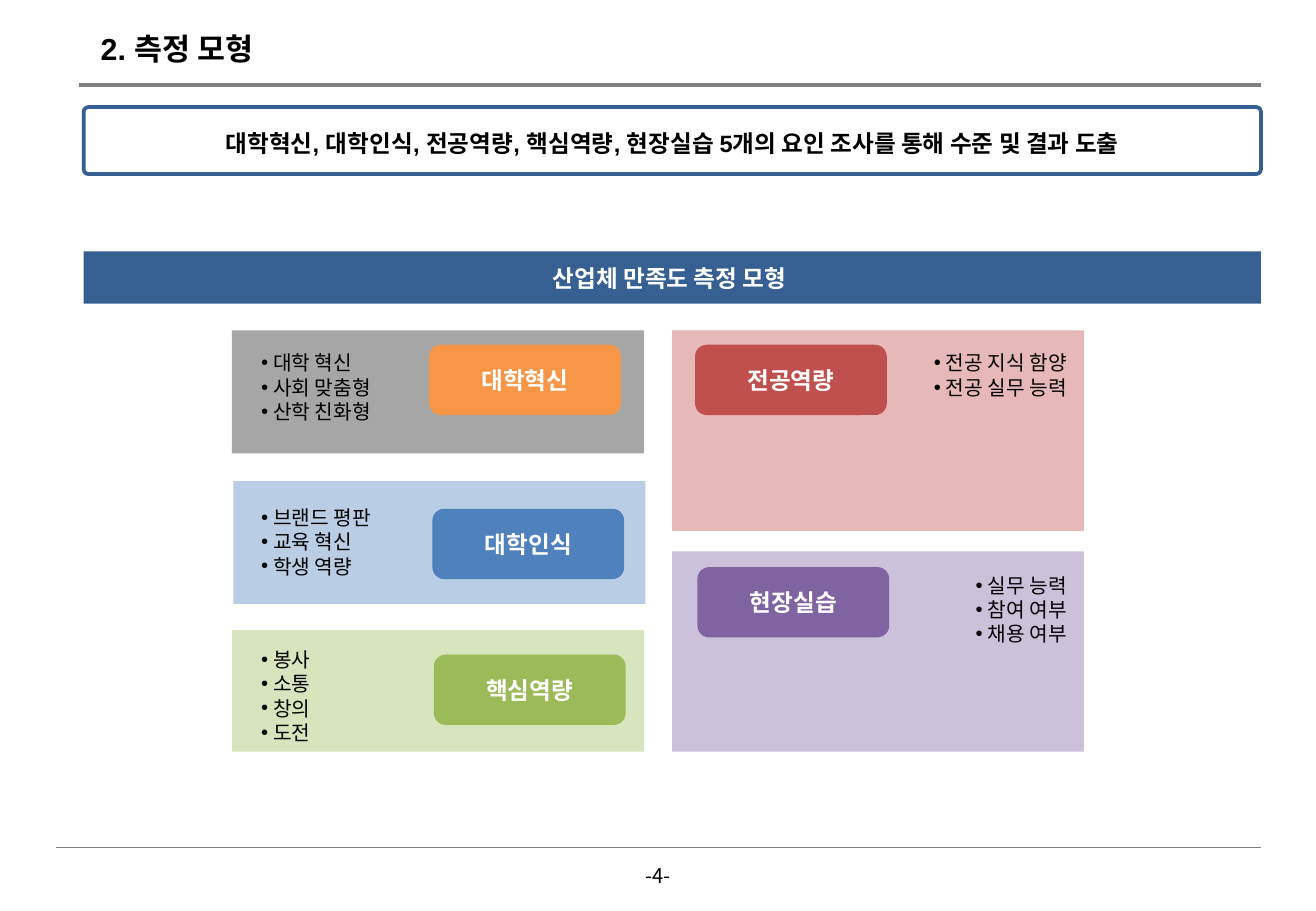
from dataclasses import dataclass

from lxml import etree
from pptx import Presentation
from pptx.dml.color import RGBColor
from pptx.enum import shapes, text
from pptx.oxml.ns import qn
from pptx.util import Cm, Pt

COLOURS = {
    "black": "000000", "white": "FFFFFF", "rule": "808080", "navy": "376092",
    "grey": "A6A6A6", "orange": "F79646", "pale blue": "B9CDE5", "blue": "4F81BD",
    "pale green": "D7E4BD", "green": "9BBB59", "pale red": "E6B9B8", "red": "C0504D",
    "pale purple": "CCC1DA", "purple": "8064A2",
}
LATIN_FONT = "Arial"
KOREAN_FONT = "Noto Sans CJK KR"
ALIGN = text.PP_ALIGN
ANCHOR = text.MSO_ANCHOR
RECTANGLE = shapes.MSO_SHAPE.RECTANGLE
ROUNDED = shapes.MSO_SHAPE.ROUNDED_RECTANGLE

CONTENT_LEFT, CONTENT_WIDTH = 1.75, 24.61
PANEL_WIDTH = 8.61
TAG_WIDTH, TAG_HEIGHT = 4.01, 1.47
LIST_WIDTH = 4.4
LIST_LEFT = {ALIGN.LEFT: 5.21, ALIGN.RIGHT: 18.15}
BULLET_INDENT = 0.25


@dataclass
class Factor:
    name: str
    items: list[str]
    panel_colour: str
    tag_colour: str
    panel_left: float
    panel_top: float
    panel_height: float
    tag_left: float
    tag_top: float
    list_top: float
    list_align: ALIGN = ALIGN.LEFT


FACTORS = [
    Factor("대학혁신", ["대학 혁신", "사회 맞춤형", "산학 친화형"], "grey", "orange",
           4.85, 6.91, 2.57, 8.97, 7.21, 7.21),
    Factor("대학인식", ["브랜드 평판", "교육 혁신", "학생 역량"], "pale blue", "blue",
           4.88, 10.06, 2.57, 9.04, 10.64, 10.44),
    Factor("핵심역량", ["봉사", "소통", "창의", "도전"], "pale green", "green",
           4.85, 13.18, 2.54, 9.07, 13.69, 13.41),
    Factor("전공역량", ["전공 지식 함양", "전공 실무 능력"], "pale red", "red",
           14.05, 6.91, 4.19, 14.53, 7.21, 7.21, ALIGN.RIGHT),
    Factor("현장실습", ["실무 능력", "참여 여부", "채용 여부"], "pale purple", "purple",
           14.05, 11.53, 4.19, 14.58, 11.86, 11.86, ALIGN.RIGHT),
]


def rgb(colour: str) -> RGBColor:
    return RGBColor.from_string(COLOURS[colour])


def add_run(paragraph, words: str, size: float, colour: str = "black",
            bold: bool = False, font: str = KOREAN_FONT) -> None:
    run = paragraph.add_run()
    run.text = words
    run.font.size = Pt(size)
    run.font.bold = bold
    run.font.name = font
    run.font.color.rgb = rgb(colour)
    east_asian = etree.SubElement(run.font._element, qn("a:ea"))
    east_asian.set("typeface", KOREAN_FONT)


def add_box(slide, kind, left: float, top: float, width: float, height: float,
            fill: str, corner: float | None = None):
    box = slide.shapes.add_shape(kind, Cm(left), Cm(top), Cm(width), Cm(height))
    box.shadow.inherit = False
    box.fill.solid()
    box.fill.fore_color.rgb = rgb(fill)
    box.line.fill.background()
    if corner is not None:
        box.adjustments[0] = corner
    return box


def add_label(box, words: str, colour: str = "white", font: str = KOREAN_FONT):
    box.text_frame.vertical_anchor = ANCHOR.MIDDLE
    paragraph = box.text_frame.paragraphs[0]
    paragraph.alignment = ALIGN.CENTER
    add_run(paragraph, words, 14, colour, True, font)
    return paragraph


def add_rule(slide, left: float, right: float, y: float, weight: float) -> None:
    rule = slide.shapes.add_connector(
        shapes.MSO_CONNECTOR.STRAIGHT, Cm(left), Cm(y), Cm(right), Cm(y))
    rule.line.color.rgb = rgb("rule")
    rule.line.width = Pt(weight)
    etree.SubElement(rule._element.spPr, qn("a:effectLst"))


def add_bullet(paragraph) -> None:
    properties = paragraph._p.get_or_add_pPr()
    properties.set("marL", str(Cm(BULLET_INDENT)))
    properties.set("indent", str(-Cm(BULLET_INDENT)))
    etree.SubElement(properties, qn("a:buFont")).set("typeface", LATIN_FONT)
    etree.SubElement(properties, qn("a:buChar")).set("char", "•")


def add_factor(slide, factor: Factor) -> None:
    """Draw a panel with its bulleted items and its name tag."""
    add_box(slide, ROUNDED, factor.panel_left, factor.panel_top, PANEL_WIDTH,
            factor.panel_height, factor.panel_colour, 0)
    tag = add_box(slide, ROUNDED, factor.tag_left, factor.tag_top, TAG_WIDTH,
                  TAG_HEIGHT, factor.tag_colour)
    add_label(tag, factor.name)

    list_height = 0.25 + 0.52 * len(factor.items)
    item_list = slide.shapes.add_textbox(
        Cm(LIST_LEFT[factor.list_align]), Cm(factor.list_top),
        Cm(LIST_WIDTH), Cm(list_height))
    frame = item_list.text_frame
    frame.word_wrap = True
    for index, item in enumerate(factor.items):
        paragraph = frame.add_paragraph() if index else frame.paragraphs[0]
        paragraph.alignment = factor.list_align
        add_bullet(paragraph)
        add_run(paragraph, item, 12)


def add_title(slide, words: str) -> None:
    title = slide.shapes.title
    title.left, title.top, title.width, title.height = Cm(1.85), Cm(0.51), Cm(4.07), Cm(1.02)
    title.text_frame.vertical_anchor = ANCHOR.TOP
    title.text_frame.auto_size = text.MSO_AUTO_SIZE.NONE
    paragraph = title.text_frame.paragraphs[0]
    paragraph.alignment = ALIGN.LEFT
    add_run(paragraph, words, 18, bold=True, font=LATIN_FONT)


def add_summary(slide, words: str) -> None:
    summary = add_box(slide, ROUNDED, CONTENT_LEFT, 2.24, CONTENT_WIDTH, 1.4, "white", 0.07)
    summary.line.color.rgb = rgb("navy")
    summary.line.width = Pt(2.25)
    paragraph = add_label(summary, words, "black", LATIN_FONT)
    paragraph.line_spacing = 1.5
    paragraph.space_after = Pt(3)
    summary.text_frame.vertical_anchor = ANCHOR.TOP


def add_page_number(slide, words: str) -> None:
    number = slide.shapes.add_textbox(Cm(13.06), Cm(17.93), Cm(1.4), Cm(0.76))
    number.text_frame.word_wrap = False
    paragraph = number.text_frame.paragraphs[0]
    paragraph.alignment = ALIGN.CENTER
    add_run(paragraph, words, 12)


def main() -> None:
    presentation = Presentation()
    presentation.slide_width, presentation.slide_height = Cm(27.51), Cm(19.05)
    slide = presentation.slides.add_slide(presentation.slide_layouts[5])

    add_title(slide, "2. 측정 모형")
    add_rule(slide, 1.65, 26.37, 1.78, 2.25)
    add_summary(slide, "대학혁신, 대학인식, 전공역량, 핵심역량, 현장실습 5개의 요인 조사를 통해 "
                       "수준 및 결과 도출")
    heading = add_box(slide, RECTANGLE, CONTENT_LEFT, 5.26, CONTENT_WIDTH, 1.09, "navy")
    add_label(heading, "산업체 만족도 측정 모형 ", font=LATIN_FONT)
    for factor in FACTORS:
        add_factor(slide, factor)
    add_rule(slide, 1.17, 26.37, 17.73, 0.5)
    add_page_number(slide, "-4-")

    presentation.save("out.pptx")


if __name__ == "__main__":
    main()
